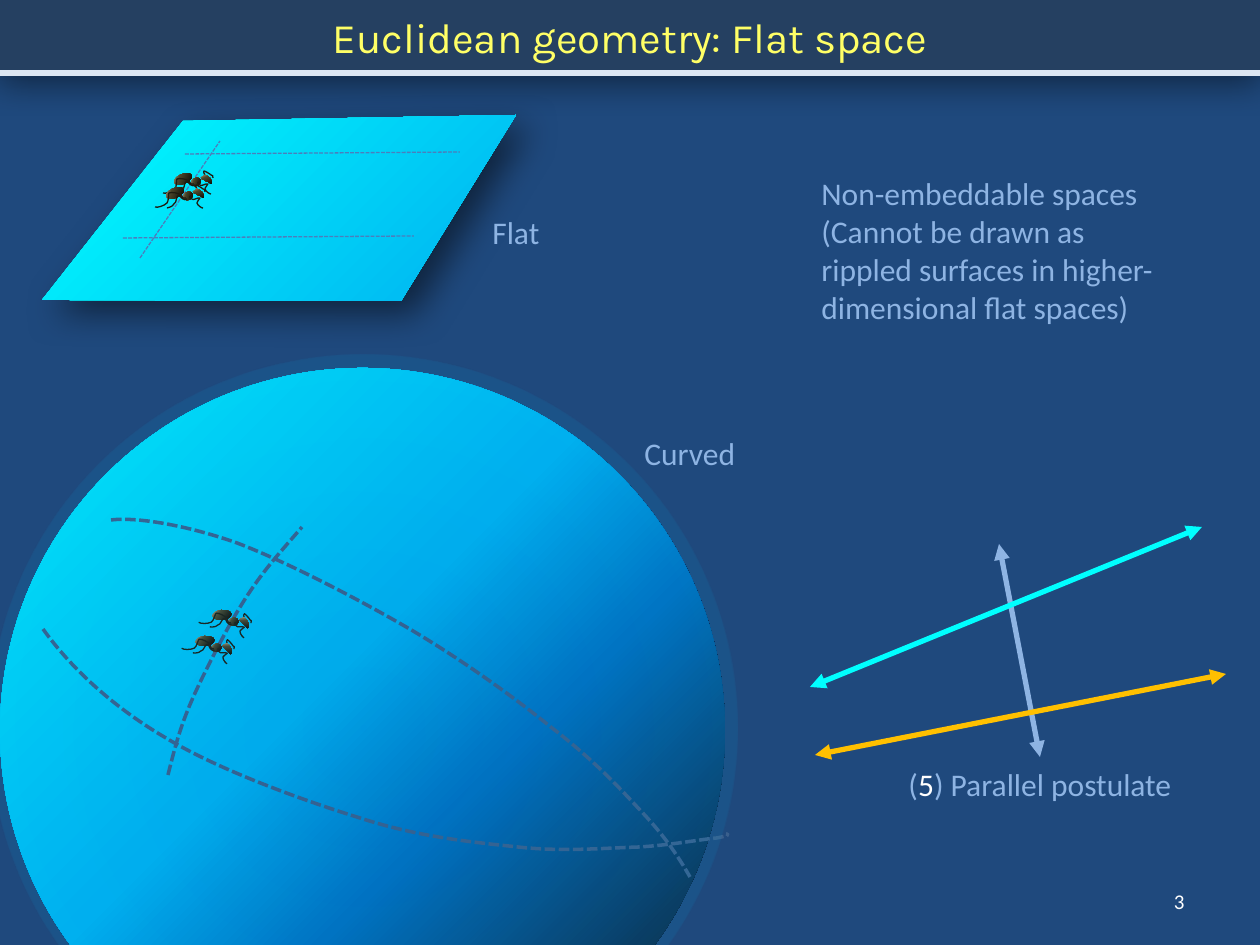
from math import cos, radians, sin
from pptx import Presentation
from pptx.dml.color import RGBColor
from pptx.enum import dml, shapes, text
from pptx.oxml import parse_xml
from pptx.oxml.ns import nsdecls
from pptx.util import Pt

PX = 914400 // 126
THEME = {
    "back": "1F497D", "header": "254061", "rule": "DCE6F2", "title": "FFFF66",
    "text": "8EB4E3", "white": "FFFFFF", "gold": "FFC000", "cyan": "00FFFF",
    "track": "4B7EBC", "arc": "3A5F8C", "leg": "1E1C11",
    "head_font": "Karla", "body_font": "Calibri",
    "head_size": 24, "body_size": 18, "number_size": 12,
    "ant": [(0, "C4BD97", 100), (36, "4A452A", 100), (100, "000000", 100)],
    "paper": [(0, "00FFFF", 100), (100, "00B0F0", 100)],
    "globe": [(0, "00FFFF", 100), (45, "00B0F0", 100), (60, "0070C0", 100),
              (83, "0F243E", 100), (100, "000000", 100)],
    "halo": [(0, "0070C0", 10), (60, "00B0F0", 10), (100, "00B0F0", 10)],
}
DIAGONAL = '<a:lin ang="2700000" scaled="0"/>'
CIRCLE = '<a:path path="circle"><a:fillToRect l="{0}" t="{0}" r="{1}" b="{1}"/></a:path>'


def shade(shape, stops, direction=DIAGONAL):
    shape.shadow.inherit = False
    shape.line.fill.background()
    shape.fill.gradient()
    props = shape._element.spPr
    marks = "".join(
        f'<a:gs pos="{pos * 1000}"><a:srgbClr val="{color}"><a:alpha val="{alpha * 1000}"/>'
        f'</a:srgbClr></a:gs>' for pos, color, alpha in stops)
    props.replace(props.gradFill, parse_xml(
        f'<a:gradFill {nsdecls("a")} rotWithShape="1"><a:gsLst>{marks}</a:gsLst>{direction}</a:gradFill>'))


def curve(group, points, turn, color, width, closed=False):
    c, s = cos(radians(turn)), sin(radians(turn))
    level = [(x * c + y * s, y * c - x * s) for x, y in points]
    mid_x, mid_y = ((min(values) + max(values)) / 2 for values in zip(*level))
    shift_x, shift_y = mid_x * c - mid_y * s - mid_x, mid_x * s + mid_y * c - mid_y
    placed = [(round((x + shift_x) * PX), round((y + shift_y) * PX)) for x, y in level]
    builder = group.shapes.build_freeform(*placed[0])
    builder.add_line_segments(placed[1:], close=closed)
    outline = builder.convert_to_shape()
    outline.rotation = turn % 360
    steps = outline._element.spPr.findall(".//{*}lnTo")
    for i in range(0, len(steps), 3):
        bend = parse_xml(f'<a:cubicBezTo {nsdecls("a")}/>')
        steps[i].addprevious(bend)
        for step in steps[i:i + 3]:
            bend.append(step[0])
            step.getparent().remove(step)
    outline.shadow.inherit = False
    outline.fill.background()
    outline.line.color.rgb = RGBColor.from_string(color)
    outline.line.width = Pt(width)
    return outline


deck = Presentation()
deck.slide_width, deck.slide_height = 1260 * PX, 945 * PX
slide = deck.slides.add_slide(deck.slide_layouts[5])
slide.background.fill.solid()
slide.background.fill.fore_color.rgb = RGBColor.from_string(THEME["back"])
canvas = slide.shapes

header = canvas.title
header.left, header.top, header.width, header.height = 0, 0, 1260 * PX, 73 * PX
header.fill.solid()
header.fill.fore_color.rgb = RGBColor.from_string(THEME["header"])
header.text_frame.vertical_anchor = text.MSO_ANCHOR.MIDDLE
heading = header.text_frame.paragraphs[0]
heading.alignment = text.PP_ALIGN.CENTER
topic = heading.add_run()
topic.text = "Euclidean geometry: Flat space"
topic.font.name, topic.font.size = THEME["head_font"], Pt(THEME["head_size"])
topic.font.color.rgb = RGBColor.from_string(THEME["title"])

frame = canvas.add_shape(shapes.MSO_SHAPE.RECTANGLE, -21 * PX, 73 * PX, 1302 * PX, 903 * PX)
frame.shadow.inherit = False
frame.fill.background()
frame.line.color.rgb = RGBColor.from_string(THEME["rule"])
frame.line.width = Pt(3)

globe = canvas.add_shape(shapes.MSO_SHAPE.OVAL, 0, 368 * PX, 725 * PX, 725 * PX)
globe.rotation = 348.6
shade(globe, THEME["globe"], CIRCLE.format(0, 100000))

corners = [(183, 121), (516, 115), (401, 301), (42, 300)]
outline = canvas.build_freeform(*corners[0], scale=PX)
outline.add_line_segments(corners[1:], close=True)
paper = outline.convert_to_shape()
shade(paper, THEME["paper"])

for surface, distance, angle in ((header, 5, 90), (paper, 10, 45)):
    surface.shadow.inherit = False
    surface._element.spPr.find("{*}effectLst").append(parse_xml(
        f'<a:outerShdw {nsdecls("a")} blurRad="{Pt(20)}" dist="{Pt(distance)}" dir="{angle * 60000}" '
        'algn="ctr" rotWithShape="0"><a:srgbClr val="000000"><a:alpha val="50000"/></a:srgbClr></a:outerShdw>'))

flat_tracks = canvas.add_group_shape()
for x1, y1, x2, y2, color, arrow in (
    (999, 544, 1040, 757, THEME["text"], True),
    (815, 755, 1226, 674, THEME["gold"], True),
    (810, 687, 1202, 527, THEME["cyan"], True),
    (140, 258, 220, 141, THEME["track"], False),
    (123, 238, 414, 236, THEME["track"], False),
    (185, 154, 460, 152, THEME["track"], False),
):
    parent = canvas if arrow else flat_tracks.shapes
    path = parent.add_connector(shapes.MSO_CONNECTOR.STRAIGHT, x1 * PX, y1 * PX, x2 * PX, y2 * PX)
    path.line.color.rgb = RGBColor.from_string(color)
    path.line.width = Pt(3 if arrow else 0.75)
    if arrow:
        for end in ("headEnd", "tailEnd"):
            path.line._ln.append(parse_xml(f'<a:{end} {nsdecls("a")} type="triangle"/>'))
    else:
        path.line.dash_style = dml.MSO_LINE.SQUARE_DOT
    path._element.spPr.append(parse_xml(f'<a:effectLst {nsdecls("a")}/>'))

globe_tracks = canvas.add_group_shape()
for arc in (
    [(43, 629), (71, 668), (113, 707), (166, 738), (219, 770), (302, 800), (360, 818),
     (418, 837), (471, 842), (518, 847), (563, 852), (605, 848), (639, 847),
     (672, 845), (703, 839), (717, 838), (732, 835), (728, 834), (726, 834)],
    [(111, 520), (137, 517), (186, 525), (237, 543), (287, 562), (360, 600), (413, 631),
     (465, 662), (515, 698), (552, 728), (590, 757), (616, 784), (639, 809),
     (662, 833), (677, 854), (690, 877)],
    [(168, 775), (180, 727), (186, 708), (219, 645), (252, 581), (273, 561), (302, 527)],
):
    curve(globe_tracks, arc, 348.6, THEME["arc"], 2).line.dash_style = dml.MSO_LINE.SQUARE_DOT

ANT_SEGMENTS = [(0, 0, 19, 10, 336.5), (13, 3, 10, 8, 330.1)]
ANT_LIMBS = [
    [(22, -4), (21, -5), (20, -8), (21, -8), (22, -8), (27, -5), (28, -4), (30, -4), (30, -3), (30, -1)],
    [(16, 3), (13, 3), (16, 6), (17, 6), (18, 8), (23, 4), (25, 5),
     (25, 5), (22, 9), (22, 10), (23, 13), (27, 15), (28, 15)],
    [(12, 6), (11, 6), (9, 8), (8, 6), (7, 6), (4, 1), (3, 3),
     (1, 3), (2, 10), (-1, 11), (-2, 14), (-8, 15), (-8, 15)],
    [(11, 5), (9, 5), (9, 5), (8, 5), (7, 4), (6, 1), (4, 1), (2, 0), (-3, -1), (-6, 0),
     (-7, 1), (-6, 8), (-8, 10), (-11, 13), (-18, 15), (-20, 14)],
]
ANT_HEAD = [(22, -4), (21, -4), (20, -3), (18, -1), (18, 0), (20, 1), (21, 1), (21, 3), (23, 1), (25, 3),
            (26, 3), (28, 5), (28, 5), (30, 5), (28, 0), (27, -1), (26, -3), (23, -4), (22, -4)]
for ant_x, ant_y, turn in ((183, 179, 0), (175, 193, 0), (222, 615, 17.6), (205, 641, 17.6)):
    ant = canvas.add_group_shape()
    c, s = cos(radians(turn)), sin(radians(turn))
    for x, y, width, height, tilt in ANT_SEGMENTS:
        left, top = ant_x + x * c - y * s - width / 2, ant_y + x * s + y * c - height / 2
        segment = ant.shapes.add_shape(shapes.MSO_SHAPE.OVAL, round(left * PX), round(top * PX),
                                       width * PX, height * PX)
        segment.rotation = (tilt + turn) % 360
        shade(segment, THEME["ant"])
    for part in ANT_LIMBS + [ANT_HEAD]:
        placed = [(ant_x + x * c - y * s, ant_y + x * s + y * c) for x, y in part]
        limb = curve(ant, placed, 22.3 + turn, THEME["leg"], 0.75, part is ANT_HEAD)
        if part is ANT_HEAD:
            shade(limb, THEME["ant"])

blue, white = THEME["text"], THEME["white"]
left, center, right = text.PP_ALIGN.LEFT, text.PP_ALIGN.CENTER, text.PP_ALIGN.RIGHT
for x, y, width, height, align, size, wrap, lines in (
    (903, 876, 294, 50, right, THEME["number_size"], True, [[("3", white)]]),
    (878, 759, 324, 50, center, THEME["body_size"], True,
     [[("(", blue), ("5", white), (") Parallel postulate", blue)]]),
    (480, 207, 73, 50, left, THEME["body_size"], False, [[("Flat", blue)]]),
    (632, 428, 117, 50, left, THEME["body_size"], False, [[("Curved", blue)]]),
    (809, 168, 374, 165, left, THEME["body_size"], True,
     [[("Non-embeddable spaces", blue)],
      [("(Cannot be drawn as rippled surfaces in higher-dimensional flat spaces)", blue)]]),
):
    body = canvas.add_textbox(x * PX, y * PX, width * PX, height * PX).text_frame
    body.word_wrap = wrap
    if size == THEME["number_size"]:
        body.vertical_anchor = text.MSO_ANCHOR.MIDDLE
    for index, pieces in enumerate(lines):
        line = body.add_paragraph() if index else body.paragraphs[0]
        line.alignment = align
        for words, color in pieces:
            piece = line.add_run()
            piece.text = words
            piece.font.name, piece.font.size = THEME["body_font"], Pt(size)
            piece.font.color.rgb = RGBColor.from_string(color)

halo = canvas.add_shape(shapes.MSO_SHAPE.OVAL, -10 * PX, 355 * PX, 747 * PX, 747 * PX)
halo.rotation = 348.6
shade(halo, THEME["halo"], CIRCLE.format(50000, 50000))

deck.save("out.pptx")
